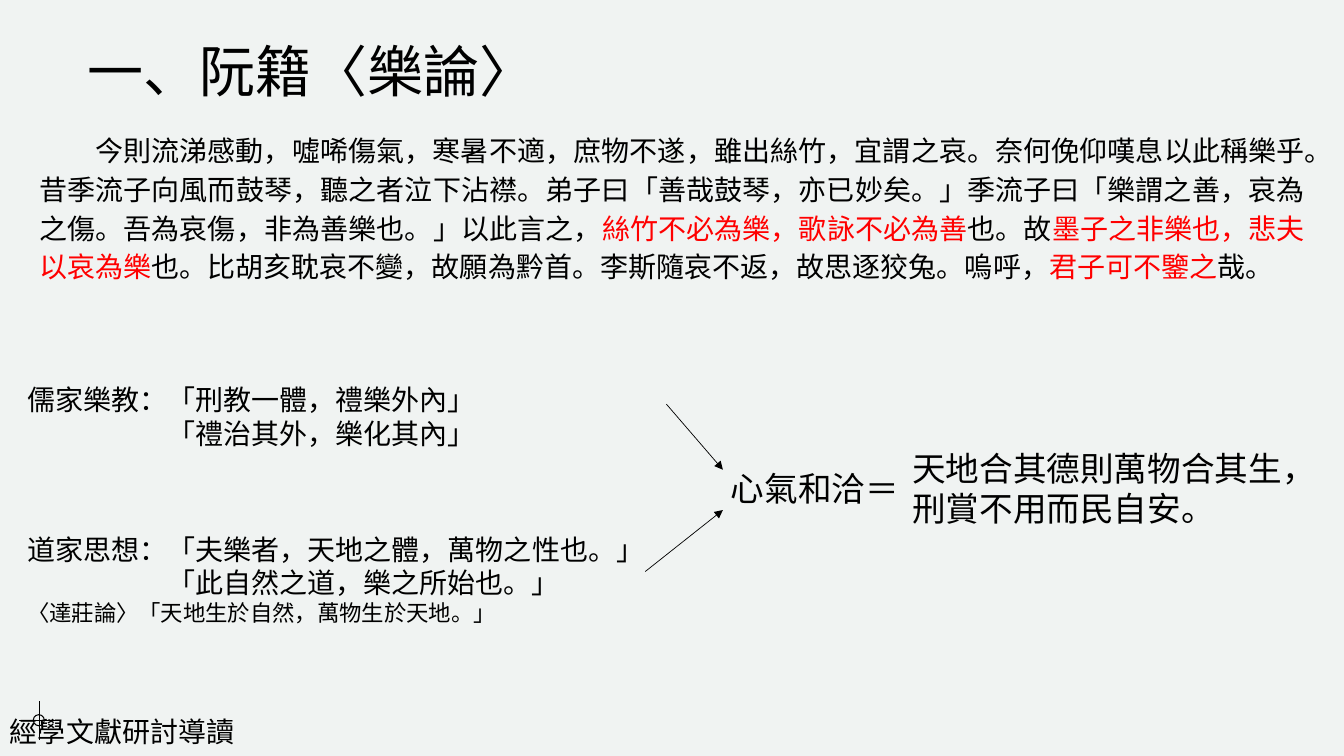
from dataclasses import dataclass

from pptx import Presentation
from pptx.dml.color import RGBColor
from pptx.enum.shapes import MSO_CONNECTOR, MSO_SHAPE
from pptx.enum.text import MSO_ANCHOR, MSO_AUTO_SIZE, PP_ALIGN
from pptx.oxml.ns import qn
from pptx.oxml.xmlchemy import OxmlElement
from pptx.slide import Slide
from pptx.text.text import TextFrame
from pptx.util import Emu, Pt


@dataclass(frozen=True)
class Theme:
    background: RGBColor = RGBColor(0xF0, 0xF3, 0xF2)
    ink: RGBColor = RGBColor(0, 0, 0)
    accent: RGBColor = RGBColor(0xFF, 0, 0)
    cjk: str = "Noto Sans CJK SC"
    latin: str = "Arial"
    title: int = 40
    conclusion: int = 24
    body: int = 20
    note: int = 16
    hairline: float = 0.5
    marker_line: float = 0.75


THEME = Theme()


@dataclass(frozen=True)
class Box:
    left: int
    top: int
    width: int
    height: int

    def emu(self) -> tuple[Emu, Emu, Emu, Emu]:
        return px(self.left), px(self.top), px(self.width), px(self.height)


@dataclass(frozen=True)
class Para:
    """Runs alternate between ink and accent colour; indents count characters."""
    runs: tuple[str, ...]
    size: int = THEME.body
    left: int = 0
    first: int = 0
    justified: bool = False
    spacing: float = 1.0


@dataclass(frozen=True)
class Block:
    box: Box
    paras: tuple[Para, ...]
    font: str = THEME.cjk


@dataclass(frozen=True)
class Line:
    x1: int
    y1: int
    x2: int
    y2: int
    weight: float
    arrow: bool = False


TITLE = Block(Box(77, 31, 620, 77), (Para(("一、阮籍〈樂論〉",), THEME.title),))

PASSAGE = (
    "今則流涕感動，噓唏傷氣，寒暑不適，庶物不遂，雖出絲竹，宜謂之哀。"
    "奈何俛仰嘆息以此稱樂乎。昔季流子向風而鼓琴，聽之者泣下沾襟。"
    "弟子曰「善哉鼓琴，亦已妙矣。」季流子曰「樂謂之善，哀為之傷。"
    "吾為哀傷，非為善樂也。」以此言之，",
    "絲竹不必為樂，歌詠不必為善",
    "也。故",
    "墨子之非樂也，悲夫以哀為樂",
    "也。比胡亥耽哀不變，故願為黔首。李斯隨哀不返，故思逐狡兔。嗚呼，",
    "君子可不鑒之",
    "哉。",
)

BLOCKS = (
    Block(Box(0, 704, 1242, 44), (Para(("經學文獻研討導讀",)),), THEME.latin),
    Block(Box(29, 123, 1275, 163),
          (Para(PASSAGE, first=2, justified=True, spacing=1.15),)),
    Block(Box(715, 459, 189, 50), (Para(("心氣和洽＝",), THEME.conclusion),)),
    Block(Box(17, 375, 878, 77), (
        Para(("儒家樂教：「刑教一體，禮樂外內」",)),
        Para(("「禮治其外，樂化其內」",), left=5),
    )),
    Block(Box(17, 523, 758, 108), (
        Para(("道家思想：「夫樂者，天地之體，萬物之性也。」",)),
        Para(("「此自然之道，樂之所始也。」",), left=5),
        Para(("〈達莊論〉「天地生於自然，萬物生於天地。」",), THEME.note),
    )),
    Block(Box(895, 439, 432, 91),
          (Para(("天地合其德則萬物合其生，刑賞不用而民自安。",), THEME.conclusion),)),
)

MARKER_RING = Box(33, 709, 11, 11)
MARKER_LINES = (
    Line(19, 715, 58, 715, THEME.marker_line),
    Line(39, 734, 39, 695, THEME.marker_line),
)
ARROWS = (
    Line(661, 401, 717, 466, THEME.hairline, arrow=True),
    Line(640, 567, 717, 506, THEME.hairline, arrow=True),
)


def px(length: int) -> Emu:
    """One px is a hundredth of an inch."""
    return Emu(length * 9144)


def write(frame: TextFrame, block: Block) -> None:
    frame.word_wrap = True
    frame.auto_size = MSO_AUTO_SIZE.NONE
    frame.vertical_anchor = MSO_ANCHOR.TOP
    for number, para in enumerate(block.paras):
        paragraph = frame.add_paragraph() if number else frame.paragraphs[0]
        paragraph.alignment = PP_ALIGN.JUSTIFY if para.justified else PP_ALIGN.LEFT
        paragraph.line_spacing = para.spacing
        properties = paragraph._p.get_or_add_pPr()
        properties.set("marL", str(Pt(para.left * para.size)))
        properties.set("indent", str(Pt(para.first * para.size)))
        for position, words in enumerate(para.runs):
            run = paragraph.add_run()
            run.text = words
            run.font.size = Pt(para.size)
            run.font.color.rgb = THEME.accent if position % 2 else THEME.ink
            run.font.name = block.font
            if block.font == THEME.cjk:
                east_asian = OxmlElement("a:ea")
                east_asian.set("typeface", block.font)
                run.font._element.find(qn("a:latin")).addnext(east_asian)


def draw_line(slide: Slide, line: Line) -> None:
    connector = slide.shapes.add_connector(
        MSO_CONNECTOR.STRAIGHT, px(line.x1), px(line.y1), px(line.x2), px(line.y2))
    connector.line.color.rgb = THEME.ink
    connector.line.width = Pt(line.weight)
    if line.arrow:
        head = OxmlElement("a:tailEnd")
        head.set("type", "triangle")
        connector.line._get_or_add_ln().append(head)
    connector._element.spPr.append(OxmlElement("a:effectLst"))


def draw_marker(slide: Slide) -> None:
    for line in MARKER_LINES:
        draw_line(slide, line)
    ring = slide.shapes.add_shape(MSO_SHAPE.OVAL, *MARKER_RING.emu())
    ring.shadow.inherit = False
    ring.fill.background()
    ring.line.color.rgb = THEME.ink
    ring.line.width = Pt(THEME.marker_line)


def main() -> None:
    deck = Presentation()
    deck.slide_width, deck.slide_height = px(1333), px(750)
    slide = deck.slides.add_slide(deck.slide_layouts.get_by_name("Title Only"))
    slide.background.fill.solid()
    slide.background.fill.fore_color.rgb = THEME.background

    heading = slide.shapes.title
    heading.left, heading.top, heading.width, heading.height = TITLE.box.emu()
    write(heading.text_frame, TITLE)

    draw_marker(slide)
    for block in BLOCKS:
        write(slide.shapes.add_textbox(*block.box.emu()).text_frame, block)
    for arrow in ARROWS:
        draw_line(slide, arrow)
    deck.save("out.pptx")


if __name__ == "__main__":
    main()
